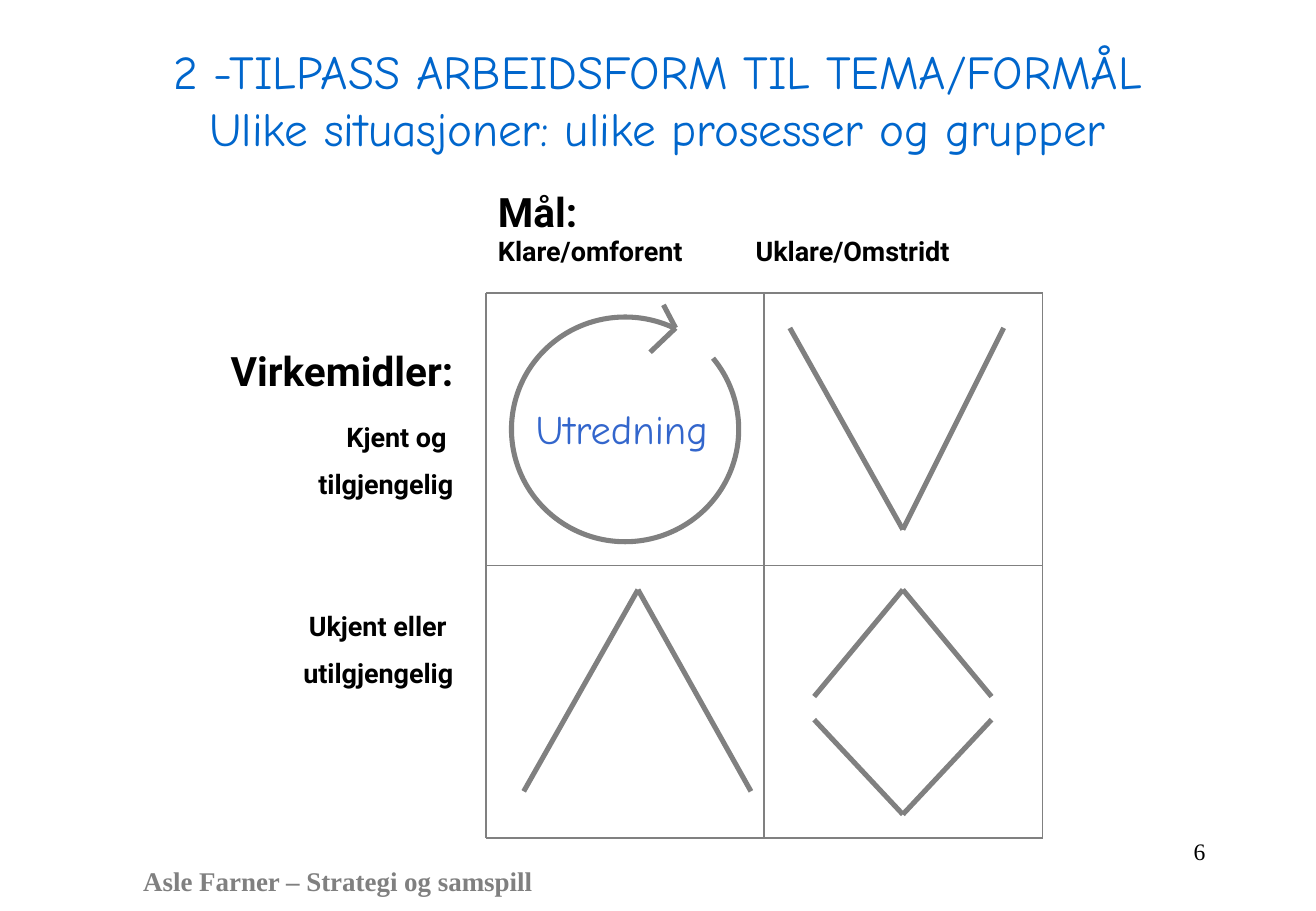
from itertools import pairwise

from pptx import Presentation
from pptx.dml.color import RGBColor
from pptx.enum.shapes import MSO_CONNECTOR, MSO_SHAPE
from pptx.enum.text import MSO_ANCHOR, MSO_AUTO_SIZE, PP_ALIGN
from pptx.oxml.ns import qn
from pptx.util import Inches, Pt
from lxml.etree import SubElement

GRAY = "808080"
HEADING = {"name": "Roboto", "size": Pt(24), "bold": True}
LABEL = {**HEADING, "size": Pt(16)}


def rgb(color):
    return RGBColor.from_string(color)


def set_frame(tf):
    tf.word_wrap = True
    tf.auto_size = MSO_AUTO_SIZE.NONE
    tf.vertical_anchor = MSO_ANCHOR.TOP


def add_text(s, box, lines, color="000000"):
    """Add a text box; each line is (text, font values, paragraph values)."""
    tf = s.shapes.add_textbox(*map(Inches, box)).text_frame
    set_frame(tf)
    write_lines(tf, lines, color)
    return tf


def write_lines(tf, lines, color):
    for i, (text, font, layout) in enumerate(lines):
        p = tf.paragraphs[0] if i == 0 else tf.add_paragraph()
        for key, value in layout.items():
            setattr(p, key, value)
        r = p.add_run()
        r.text = text
        for key, value in font.items():
            setattr(r.font, key, value)
        r.font.color.rgb = rgb(color)


def add_path(s, left, top, points, width=3):
    """Join points, given relative to left and top, with straight lines."""
    for (x1, y1), (x2, y2) in pairwise(points):
        line = s.shapes.add_connector(
            MSO_CONNECTOR.STRAIGHT,
            Inches(left + x1), Inches(top + y1),
            Inches(left + x2), Inches(top + y2))
        line.line.color.rgb = rgb(GRAY)
        line.line.width = Pt(width)
        SubElement(line._element.spPr, qn("a:effectLst"))


def add_title(s, box):
    title = s.shapes.title
    title.left, title.top, title.width, title.height = map(Inches, box)
    set_frame(title.text_frame)
    font = {"name": "Comic Neue", "size": Pt(28)}
    layout = {"alignment": PP_ALIGN.CENTER, "space_before": Pt(0)}
    lines = ["2 -TILPASS ARBEIDSFORM TIL TEMA/FORMÅL",
             "Ulike situasjoner: ulike prosesser og grupper"]
    write_lines(title.text_frame, [(t, font, layout) for t in lines], "0066CC")


def add_column_labels(s, box):
    tf = add_text(s, box, [
        ("Mål:", HEADING, {}),
        ("Klare/omforent\tUklare/Omstridt", LABEL,
         {"line_spacing": 0.4, "space_before": Pt(9)})])
    tabs = SubElement(tf.paragraphs[1]._p.get_or_add_pPr(), qn("a:tabLst"))
    SubElement(tabs, qn("a:tab"), pos=str(Inches(2.12)), algn="l")


def add_row_labels(s, box):
    layout = {"alignment": PP_ALIGN.RIGHT, "line_spacing": 0.89,
              "space_after": Pt(11)}
    add_text(s, box, [
        ("Virkemidler:", HEADING, {**layout, "space_after": Pt(17)}),
        ("Kjent og ", LABEL, layout),
        ("tilgjengelig", LABEL, layout),
        ("Ukjent eller ", LABEL, {**layout, "space_before": Pt(56)}),
        ("utilgjengelig", LABEL, layout)])


def add_cycle(s, left, top):
    arc = s.shapes.add_shape(MSO_SHAPE.ARC, Inches(left + 0.21),
                             Inches(top + 0.2), Inches(1.87), Inches(1.85))
    arc.shadow.inherit = False
    arc.fill.background()
    arc.line.color.rgb = rgb(GRAY)
    arc.line.width = Pt(3)
    for i, degrees in enumerate((321, 296)):
        arc.adjustments[i] = degrees * 0.6  # 60000 units a degree, scaled by 100000
    add_path(s, left, top, [(1.46, 0.1), (1.56, 0.29), (1.35, 0.49)])
    add_text(s, (left + 0.31, top + 0.87, 2.05, 0.5),
             [("Utredning", {"name": "Comic Neue", "size": Pt(24)}, {})],
             "3366CC")


def add_matrix(s, left, top, width, height):
    cell_w, cell_h = width / 2, height / 2
    for i in range(3):
        x, y = i * cell_w, i * cell_h
        add_path(s, left, top, [(x, 0), (x, height)], 1)
        add_path(s, left, top, [(0, y), (width, y)], 1)
    add_cycle(s, left, top)
    right, lower = left + cell_w, top + cell_h
    add_path(s, right, top, [(0.21, 0.29), (1.14, 1.95), (1.97, 0.29)])
    add_path(s, left, lower, [(0.31, 1.86), (1.25, 0.2), (2.18, 1.86)])
    for side_y, tip_y in ((1.08, 0.2), (1.27, 2.05)):
        add_path(s, right, lower,
                 [(0.41, side_y), (1.14, tip_y), (1.87, side_y)])


def add_footer(s, left, top, width, height):
    font = {"name": "Times New Roman", "size": Pt(16), "bold": True}
    add_text(s, (left, top + 0.23, 3.88, 0.33),
             [("Asle Farner – Strategi og samspill", font, {})], GRAY)
    number = {"name": "Times New Roman", "size": Pt(14)}
    add_text(s, (left + width - 2.26, top, 2.26, height),
             [("6", number, {"alignment": PP_ALIGN.RIGHT})])


def main():
    prs = Presentation()
    prs.slide_width, prs.slide_height = Inches(10.83), Inches(7.5)
    s = prs.slides.add_slide(prs.slide_layouts[5])
    add_title(s, (0.53, 0.3, 9.76, 1.18))
    add_column_labels(s, (4, 1.49, 4.76, 0.74))
    add_row_labels(s, (0.5, 2.85, 3.33, 3.87))
    add_matrix(s, 4, 2.41, 4.58, 4.49)
    add_footer(s, 1.08, 6.84, 8.94, 0.5)
    prs.save("out.pptx")


if __name__ == "__main__":
    main()
